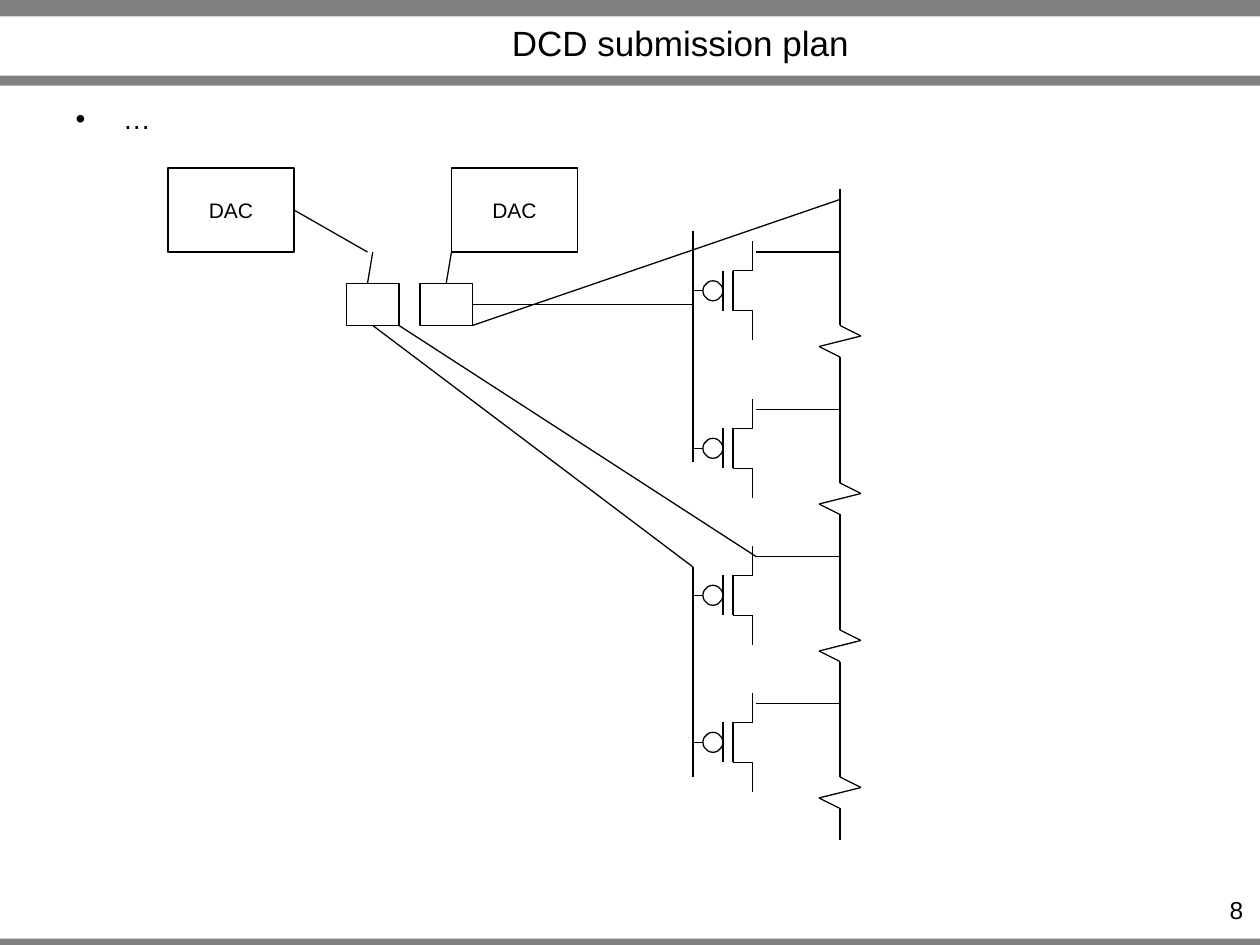
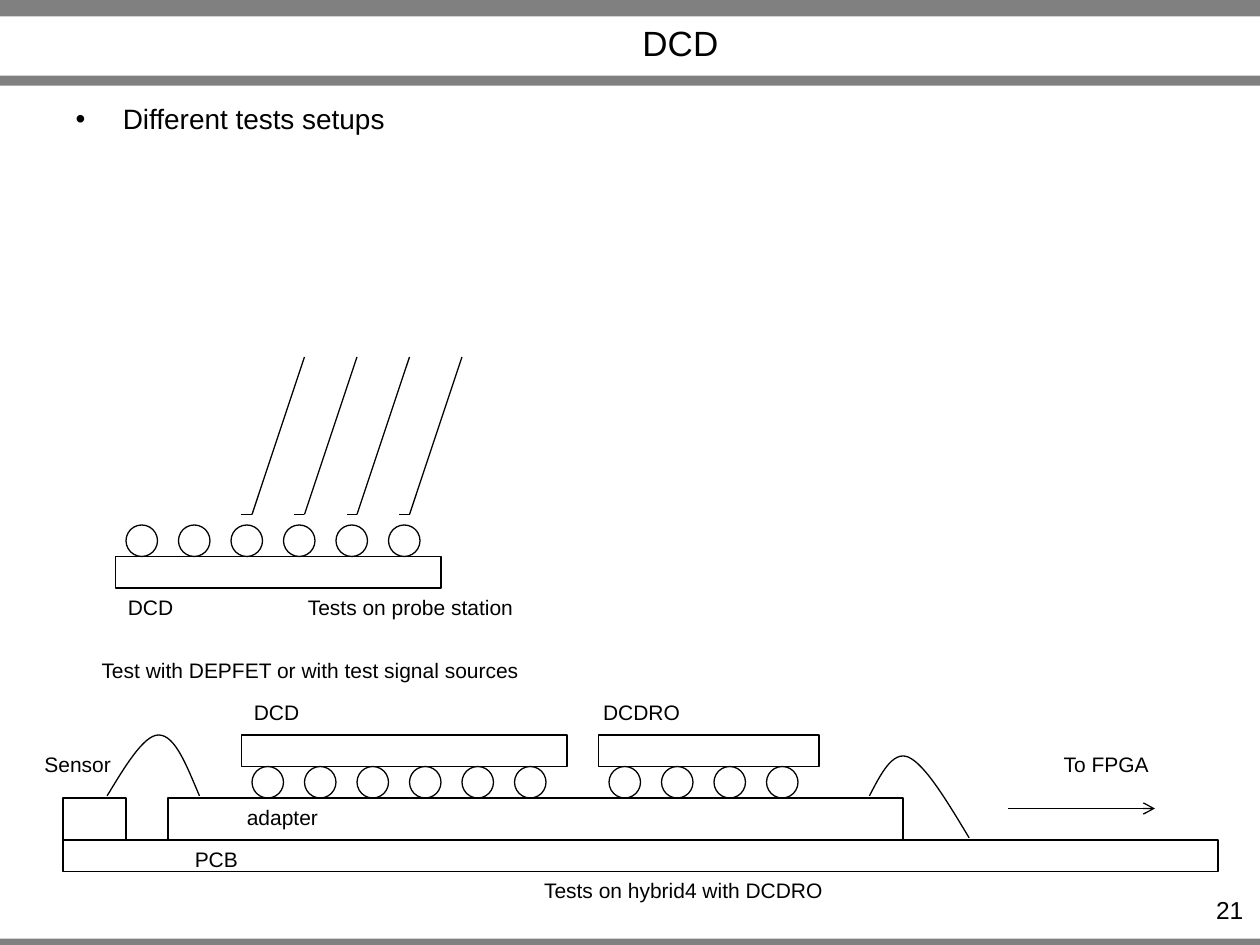
from dataclasses import dataclass
from itertools import pairwise

from lxml import etree
from pptx import Presentation
from pptx import util as u
from pptx.dml.color import RGBColor
from pptx.enum import shapes, text
from pptx.oxml import ns

COLORS = {"ink": "000000", "band": "808080", "paper": "FFFFFF"}
FONT = "Arial"
Point = tuple[float, float]


@dataclass
class Box:
    """Rectangle in grid units; twelve units make an inch."""
    x: float
    y: float
    w: float
    h: float

    def emu(self) -> tuple:
        return tuple(grid(v) for v in (self.x, self.y, self.w, self.h))


@dataclass
class Label:
    words: str
    x: float
    y: float
    w: float


@dataclass
class Chip:
    body: Box
    balls: int
    balls_y: float


BANDS = [Box(0, 89.4, 120, 0.96), Box(0, 0, 120, 1.56), Box(0, 7.2, 120, 0.96)]
TITLE = Box(15.6, 1.7, 98.4, 4.6)
NUMBER = Box(109.2, 84.7, 10.4, 2.9)


def grid(n: float) -> u.Length:
    return u.Cm(n * 2.54 / 12)


def color(name: str) -> RGBColor:
    return RGBColor.from_string(COLORS[name])


def apply(target, values: dict) -> None:
    for name, value in values.items():
        setattr(target, name, value)


# Text
def write(tf, words: str, size: int, align, **frame):
    apply(tf, {"word_wrap": True, "auto_size": text.MSO_AUTO_SIZE.NONE, **frame})
    p = tf.paragraphs[0]
    apply(p, {"alignment": align, "space_before": u.Pt(0)})
    r = p.add_run()
    r.text = words
    apply(r.font, {"name": FONT, "size": u.Pt(size)})
    r.font.color.rgb = color("ink")
    return p


def place(sp, box: Box) -> None:
    apply(sp, dict(zip(("left", "top", "width", "height"), box.emu())))


def add_label(s, label: Label) -> None:
    sp = s.shapes.add_textbox(*Box(label.x, label.y, label.w, 3.6).emu())
    write(sp.text_frame, label.words, 12, text.PP_ALIGN.CENTER,
          word_wrap=False, auto_size=text.MSO_AUTO_SIZE.SHAPE_TO_FIT_TEXT)


# Outlines and lines
def outline(sp) -> None:
    sp.line.width = u.Pt(0.75)
    sp.line.color.rgb = color("ink")


def add_shape(parent, box: Box, kind=shapes.MSO_SHAPE.RECTANGLE, fill: str = ""):
    sp = parent.shapes.add_shape(kind, *box.emu())
    sp.shadow.inherit = False
    outline(sp)
    if fill:
        sp.fill.solid()
        sp.fill.fore_color.rgb = color(fill)
    else:
        sp.fill.background()
    return sp


def add_lines(parent, *points: Point):
    """Joins the points one after another; returns the last line."""
    for start, end in pairwise(points):
        ends = [grid(v) for v in start + end]
        sp = parent.shapes.add_connector(shapes.MSO_CONNECTOR.STRAIGHT, *ends)
        outline(sp)
        etree.SubElement(sp.element.spPr, ns.qn("a:effectLst"))
    return sp


def add_curve(s, start: Point, *points: Point) -> None:
    """Draws cubic curves: two control points and an end point each."""
    builder = s.shapes.build_freeform(grid(start[0]), grid(start[1]))
    builder.add_line_segments([(grid(x), grid(y)) for x, y in points], close=False)
    sp = builder.convert_to_shape()
    sp.shadow.inherit = False
    sp.fill.background()
    outline(sp)
    steps = list(sp.element.iter(ns.qn("a:lnTo")))
    for i in range(0, len(steps), 3):
        curve = etree.SubElement(steps[i].getparent(), ns.qn("a:cubicBezTo"))
        for step in steps[i:i + 3]:
            curve.append(step[0])
            step.getparent().remove(step)


# Shared slide frame
def add_bands(s, layout) -> None:
    """Moves the grey bands to the back of the layout."""
    for i, box in enumerate(BANDS):
        sp = add_shape(s, box, fill="band")
        sp.line.fill.background()
        sp.element.nvSpPr.cNvPr.set("id", str(20 + i))
        layout.shapes.element.insert(2 + i, sp.element)


def add_slide(prs, title: str, bullet: str, body_height: float, number: str):
    s = prs.slides.add_slide(prs.slide_layouts[1])
    head, body = s.placeholders
    place(head, TITLE)
    write(head.text_frame, title, 20, text.PP_ALIGN.CENTER,
          vertical_anchor=text.MSO_ANCHOR.MIDDLE)
    place(body, Box(6, 9.1, 108, body_height))
    p = write(body.text_frame, bullet, 16, text.PP_ALIGN.LEFT,
              vertical_anchor=text.MSO_ANCHOR.TOP)
    pPr = p._p.get_or_add_pPr()
    pPr.set("marL", str(grid(4.5)))
    pPr.set("indent", str(grid(-4.5)))
    etree.SubElement(pPr, ns.qn("a:buFont"), typeface=FONT)
    etree.SubElement(pPr, ns.qn("a:buChar"), char="•")
    sp = s.shapes.add_textbox(*NUMBER.emu())
    write(sp.text_frame, number, 14, text.PP_ALIGN.RIGHT)
    return s


# Circuit parts
def add_transistor(s, tap: float) -> None:
    g = s.shapes.add_group_shape()
    mid = tap + 3.7
    drain, channel, gate, bus = 71.7, 69.8, 68.85, 66
    top, bottom = mid - 1.9, mid + 1.9
    add_lines(g, (drain, mid - 4.7), (drain, top), (channel, top),
              (channel, bottom), (drain, bottom), (drain, mid + 4.7))
    add_lines(g, (gate, top), (gate, bottom))
    add_lines(g, (bus, mid), (gate, mid))
    add_shape(g, Box(66.95, mid - 0.95, 1.9, 1.9), shapes.MSO_SHAPE.OVAL, "paper")


def add_line_break(s, tap: float) -> None:
    g = s.shapes.add_group_shape()
    add_lines(g, (80, tap), (80, tap + 7), (82, tap + 8), (78, tap + 9),
              (80, tap + 10), (80, tap + 13))


def add_chip(s, chip: Chip) -> None:
    g = s.shapes.add_group_shape()
    add_shape(g, chip.body)
    for i in range(chip.balls):
        ball = Box(chip.body.x + 1 + 5 * i, chip.balls_y, 3, 3)
        add_shape(g, ball, shapes.MSO_SHAPE.OVAL)


def build_submission_plan(prs):
    s = add_slide(prs, "DCD submission plan", "…", 10.9, "8")
    taps = [24, 39, 53, 67]
    for tap in taps:
        add_transistor(s, tap)
        add_line_break(s, tap)
        add_lines(s, (72, tap), (80, tap))
    for tap in taps[1:]:
        add_lines(s, (80, tap - 2), (80, tap + 2))

    # Converters and switches
    for x in (16, 43):
        sp = add_shape(s, Box(x, 16, 12, 8))
        write(sp.text_frame, "DAC", 12, text.PP_ALIGN.CENTER,
              vertical_anchor=text.MSO_ANCHOR.MIDDLE)
    for x in (33, 40):
        add_shape(s, Box(x, 27, 5, 4))

    # Wires
    wires = [
        ((80, 24), (80, 18)), ((66, 22), (66, 44)), ((28, 20), (35, 24)),
        ((45, 29), (66, 29)), ((43, 24), (42.5, 27)), ((35.5, 24), (35, 27)),
        ((66, 74), (66, 54), (35.5, 31)), ((72, 53), (38, 31)), ((80, 19), (45, 31)),
    ]
    for wire in wires:
        add_lines(s, *wire)
    return s


def build_test_setups(prs) -> None:
    s = add_slide(prs, "DCD", "Different tests setups", 17.9, "21")
    chips = [
        Chip(Box(11, 53, 31, 3), 6, 50),
        Chip(Box(23, 70, 31, 3), 6, 73),
        Chip(Box(57, 70, 21, 3), 4, 73),
    ]
    for chip in chips:
        add_chip(s, chip)

    # Probe needles
    for x in range(39, 23, -5):
        g = s.shapes.add_group_shape()
        add_lines(g, (x + 5, 34), (x, 49), (x - 1, 49))

    # Adapter, board and sensor
    for box in (Box(16, 76, 70, 4), Box(6, 80, 110, 3), Box(6, 76, 6, 4)):
        add_shape(s, box)

    # Bond wires
    add_curve(s, (82.8, 75.8), (83.9, 73.7), (85, 71.5), (86.5, 72.1),
              (88.1, 72.8), (90.2, 76.3), (92.3, 79.8))
    add_curve(s, (19, 75.8), (17.8, 73), (16.7, 70), (15.1, 70),
              (13.7, 70), (11.9, 73), (10.2, 75.8))

    # Arrow to the readout
    arrow = add_lines(s, (96, 77), (110, 77))
    ln = arrow.element.spPr.find(ns.qn("a:ln"))
    etree.SubElement(ln, ns.qn("a:tailEnd"), type="arrow")

    labels = [
        Label("To FPGA", 100, 71, 10.7),
        Label("DCD", 23, 66, 6.7),
        Label("DCDRO", 56.2, 66, 9.8),
        Label("Sensor", 3, 71, 8.8),
        Label("DCD", 11, 56, 6.7),
        Label("Tests on probe station", 28, 56, 22.2),
        Label("Tests on hybrid4 with DCDRO", 50.5, 83, 29.2),
        Label("Test with DEPFET or with test signal sources", 8.3, 62, 42.5),
        Label("adapter", 22.3, 76, 9.2),
        Label("PCB", 17.3, 80, 6.6),
    ]
    for label in labels:
        add_label(s, label)


def main() -> None:
    prs = Presentation()
    apply(prs, {"slide_width": u.Cm(25.4), "slide_height": u.Cm(19.05)})
    s = build_submission_plan(prs)
    add_bands(s, s.slide_layout)
    build_test_setups(prs)
    prs.save("out.pptx")


if __name__ == "__main__":
    main()
